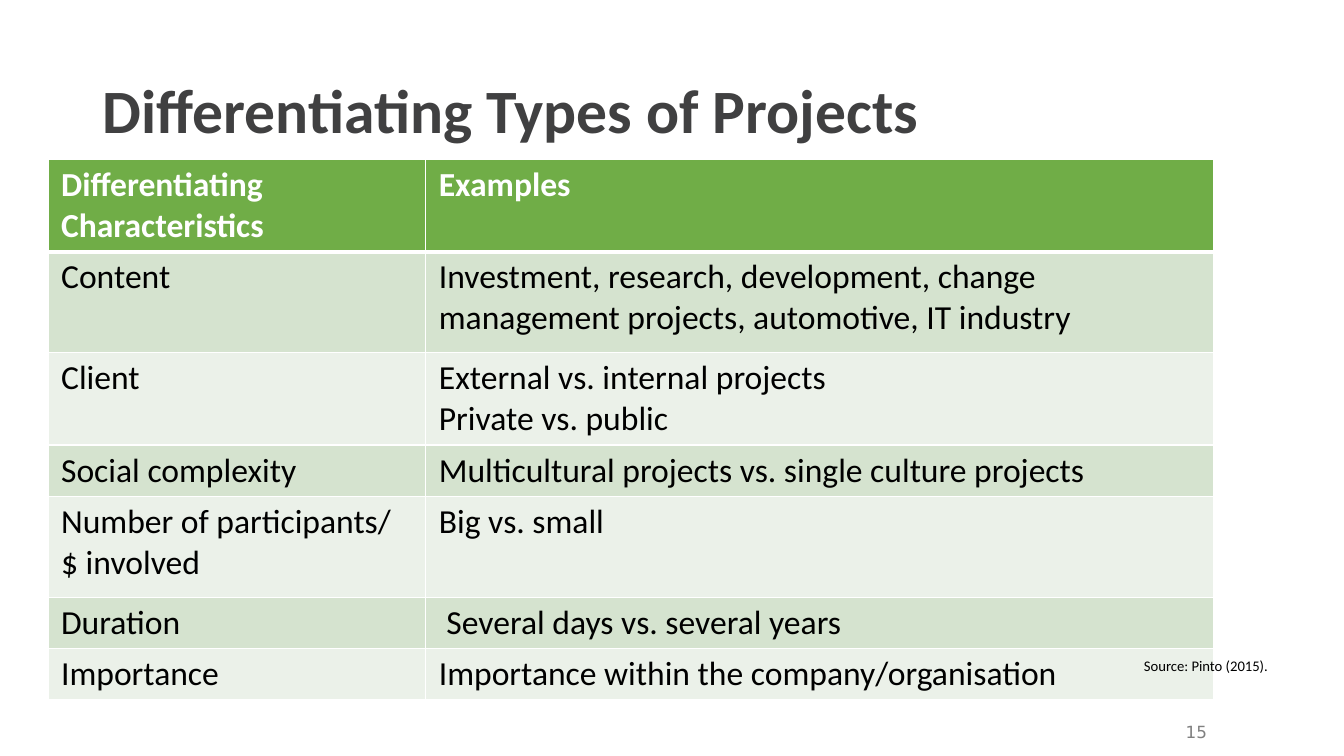
from pptx import Presentation
from pptx import util as u
from pptx.dml.color import RGBColor
from pptx.enum import text as t
from pptx.oxml import parse_xml
from pptx.oxml.ns import nsdecls

COLOURS = {
    "title": "404041",
    "header": "70AD47",
    "odd": "D5E3CF",
    "even": "EBF1E9",
    "white": "FFFFFF",
    "black": "000000",
    "number": "808080",
}
BODY_FONT = "Calibri"

COLUMN_WIDTHS = [9.52, 19.86]
# Row height in cm, characteristic, examples
ROWS = [
    (2.31, "Differentiating Characteristics", "Examples"),
    (2.54, "Content", "Investment, research, development, change management "
                      "projects, automotive, IT industry"),
    (2.31, "Client", "External vs. internal projects\nPrivate vs. public"),
    (1.29, "Social complexity", "Multicultural projects vs. single culture projects"),
    (2.54, "Number of participants/ $ involved", "Big vs. small"),
    (1.29, "Duration", " Several days vs. several years"),
    (1.29, "Importance", "Importance within the company/organisation"),
]


def colour(name):
    return RGBColor.from_string(COLOURS[name])


def style_text(frame, size, colour_name, font=BODY_FONT, bold=False, align=t.PP_ALIGN.LEFT):
    for para in frame.paragraphs:
        para.alignment = align
        para.font.name = font
        para.font.size = u.Pt(size)
        para.font.bold = bold
        para.font.color.rgb = colour(colour_name)


def place_title(page, wording):
    title = page.shapes.title
    title.left, title.top = u.Cm(2.33), u.Cm(1.01)
    title.width, title.height = u.Cm(29.21), u.Cm(3.68)
    frame = title.text_frame
    frame.text = wording
    frame.word_wrap = True
    frame.auto_size = t.MSO_AUTO_SIZE.NONE
    frame.vertical_anchor = t.MSO_ANCHOR.MIDDLE
    frame.paragraphs[0].line_spacing = 0.9
    style_text(frame, 44, "title", bold=True)


def add_borders(cell, bottom_width):
    properties = cell._tc.get_or_add_tcPr()
    widths = {"lnL": 1, "lnR": 1, "lnT": 1, "lnB": bottom_width}
    for position, (side, width) in enumerate(widths.items()):
        line = parse_xml(
            f'<a:{side} {nsdecls("a")} w="{u.Pt(width)}"><a:solidFill>'
            f'<a:srgbClr val="{COLOURS["white"]}"/></a:solidFill></a:{side}>')
        properties.insert(position, line)


def fill_cell(cell, wording, fill, is_header):
    cell.text = wording
    cell.margin_left = cell.margin_right = u.Cm(0.33)
    cell.margin_top = cell.margin_bottom = u.Cm(0.13)
    cell.fill.solid()
    cell.fill.fore_color.rgb = colour(fill)
    style_text(cell.text_frame, 24, "white" if is_header else "black", bold=is_header)
    add_borders(cell, 3 if is_header else 1)


def add_project_table(page):
    height = sum(row[0] for row in ROWS)
    table = page.shapes.add_table(
        len(ROWS), len(COLUMN_WIDTHS), u.Cm(1.21), u.Cm(4.02),
        u.Cm(sum(COLUMN_WIDTHS)), u.Cm(height)).table
    for column, width in zip(table.columns, COLUMN_WIDTHS):
        column.width = u.Cm(width)
    for index, (row_height, *wordings) in enumerate(ROWS):
        table.rows[index].height = u.Cm(row_height)
        is_header = index == 0
        fill = "header" if is_header else "odd" if index % 2 else "even"
        for column, wording in enumerate(wordings):
            fill_cell(table.cell(index, column), wording, fill, is_header)


def add_label(page, wording, left, top, width, height, anchor, **style):
    box = page.shapes.add_textbox(u.Cm(left), u.Cm(top), u.Cm(width), u.Cm(height))
    frame = box.text_frame
    frame.word_wrap = True
    frame.vertical_anchor = anchor
    frame.text = wording
    style_text(frame, **style)
    return box


def main():
    deck = Presentation()
    deck.slide_width, deck.slide_height = u.Cm(33.87), u.Cm(19.05)
    page = deck.slides.add_slide(deck.slide_layouts.get_by_name("Title Only"))

    # Heading and table
    place_title(page, "Differentiating Types of Projects")
    add_project_table(page)

    # Page number and source
    add_label(page, "15", 24.79, 17.93, 10.72, 1.02, t.MSO_ANCHOR.MIDDLE,
              size=12, colour_name="number", font="DejaVu Sans", align=t.PP_ALIGN.CENTER)
    source = add_label(page, "Source: Pinto (2015).", 28.58, 16.43, 4.14, 0.71,
                       t.MSO_ANCHOR.TOP, size=10.5, colour_name="black")
    source.text_frame.auto_size = t.MSO_AUTO_SIZE.SHAPE_TO_FIT_TEXT

    deck.save("out.pptx")


if __name__ == "__main__":
    main()
